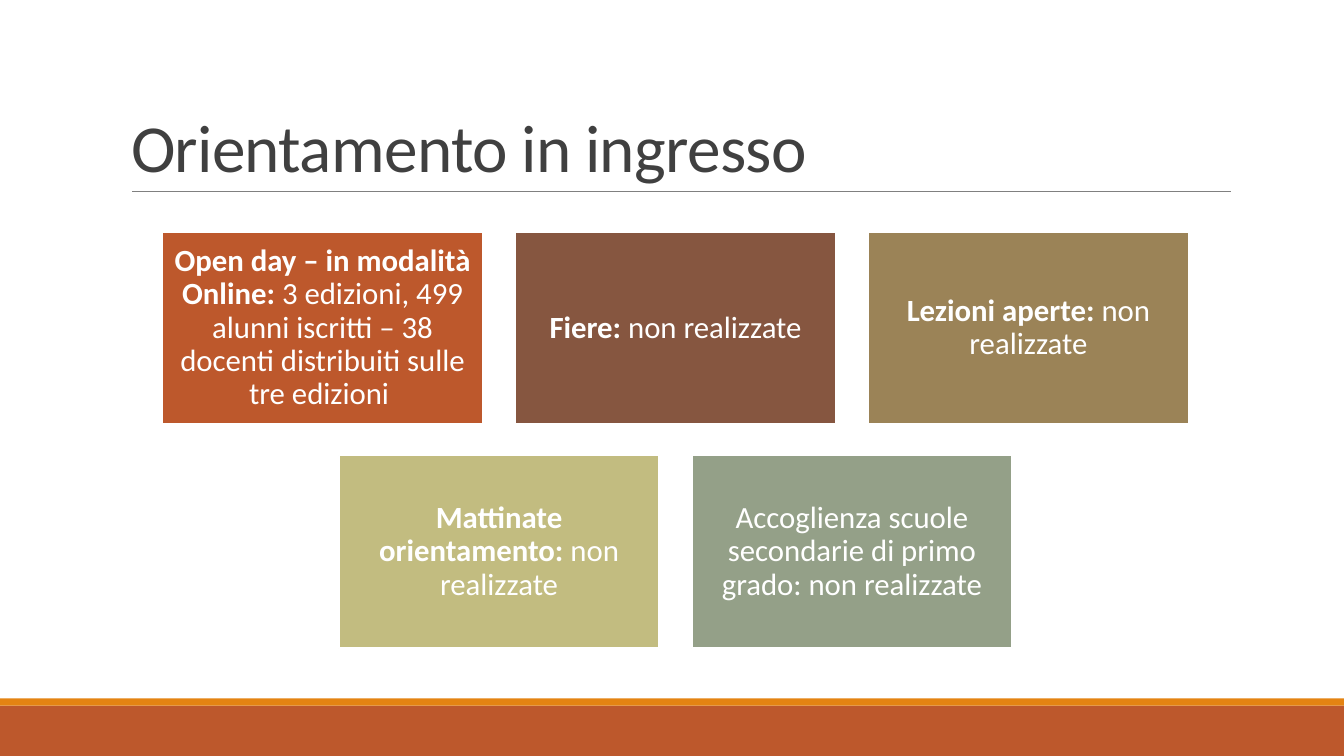
from dataclasses import dataclass

from pptx import Presentation
from pptx.dml.color import RGBColor
from pptx.enum.shapes import MSO_CONNECTOR as Link, MSO_SHAPE as Shape
from pptx.enum.text import MSO_ANCHOR as Anchor, PP_ALIGN as Align
from pptx.oxml.ns import qn
from pptx.slide import Slide
from pptx.text.text import Font
from pptx.util import Inches, Pt

FONT = "Calibri"
COLORS = {
    "rust": "BD582C", "orange": "E48312", "brown": "865640",
    "tan": "9B8357", "olive": "C2BC80", "sage": "94A088",
    "white": "FFFFFF", "gray": "808080", "dark": "404040",
}
CARD_W, CARD_H = 3.18, 1.91
GAP_X, GAP_Y = 0.32, 0.31
MID_X, TOP = 6.7, 2.3


@dataclass
class Band:
    top: float
    height: float
    color: str


@dataclass
class Card:
    head: str
    body: str
    color: str


BANDS = [Band(7, 0.5, "rust"), Band(6.93, 0.07, "orange")]
ROWS = [
    [
        Card("Open day – in modalità Online: ",
             "3 edizioni, 499 alunni iscritti – 38 docenti distribuiti sulle tre edizioni ",
             "rust"),
        Card("Fiere: ", "non realizzate", "brown"),
        Card("Lezioni aperte: ", "non realizzate", "tan"),
    ],
    [
        Card("Mattinate orientamento: ", "non realizzate", "olive"),
        Card("", "Accoglienza scuole secondarie di primo grado: non realizzate", "sage"),
    ],
]


def rgb(name: str) -> RGBColor:
    return RGBColor.from_string(COLORS[name])


def style(font: Font, size: float, color: str, bold: bool = False) -> None:
    font.name = FONT
    font.size = Pt(size)
    font.bold = bold
    font.color.rgb = rgb(color)


def add_rect(slide: Slide, left: float, top: float, width: float, height: float, color: str):
    rect = slide.shapes.add_shape(
        Shape.RECTANGLE, Inches(left), Inches(top), Inches(width), Inches(height))
    rect.shadow.inherit = False
    rect.fill.solid()
    rect.fill.fore_color.rgb = rgb(color)
    rect.line.fill.background()
    return rect


def add_rule(slide: Slide) -> None:
    rule = slide.shapes.add_connector(
        Link.STRAIGHT, Inches(1.31), Inches(1.9), Inches(12.21), Inches(1.9))
    rule.line.color.rgb = rgb("gray")
    rule.line.width = Pt(0.5)
    props = rule._element.spPr
    props.append(props.makeelement(qn("a:effectLst"), {}))


def set_title(slide: Slide, text: str) -> None:
    title = slide.shapes.title
    title.left, title.top = Inches(1.2), Inches(0.31)
    title.width, title.height = Inches(11), Inches(1.59)
    frame = title.text_frame
    frame.text = text
    frame.word_wrap = True
    frame.vertical_anchor = Anchor.BOTTOM
    para = frame.paragraphs[0]
    para.alignment = Align.LEFT
    para.line_spacing = 0.85
    run = para.runs[0]
    style(run.font, 48, "dark")
    run._r.get_or_add_rPr().set("spc", "-50")


def add_card(slide: Slide, card: Card, left: float, top: float) -> None:
    rect = add_rect(slide, left, top, CARD_W, CARD_H, card.color)
    rect.line.color.rgb = rgb("white")
    rect.line.width = Pt(1.25)
    frame = rect.text_frame
    frame.word_wrap = True
    frame.vertical_anchor = Anchor.MIDDLE
    frame.margin_left = frame.margin_right = Inches(0.09)
    frame.margin_top = frame.margin_bottom = Inches(0.09)
    para = frame.paragraphs[0]
    para.alignment = Align.CENTER
    para.line_spacing = 0.9
    for text, bold in ((card.head, True), (card.body, False)):
        if text:
            run = para.add_run()
            run.text = text
            style(run.font, 22, "white", bold)


def main() -> None:
    deck = Presentation()
    deck.slide_width, deck.slide_height = Inches(13.33), Inches(7.5)
    slide = deck.slides.add_slide(deck.slide_layouts[5])
    for band in BANDS:
        add_rect(slide, 0, band.top, 13.33, band.height, band.color)
    add_rule(slide)
    set_title(slide, "Orientamento in ingresso")
    for row, cards in enumerate(ROWS):
        span = len(cards) * (CARD_W + GAP_X) - GAP_X
        for col, card in enumerate(cards):
            left = MID_X - span / 2 + col * (CARD_W + GAP_X)
            add_card(slide, card, left, TOP + row * (CARD_H + GAP_Y))
    deck.save("out.pptx")


if __name__ == "__main__":
    main()
